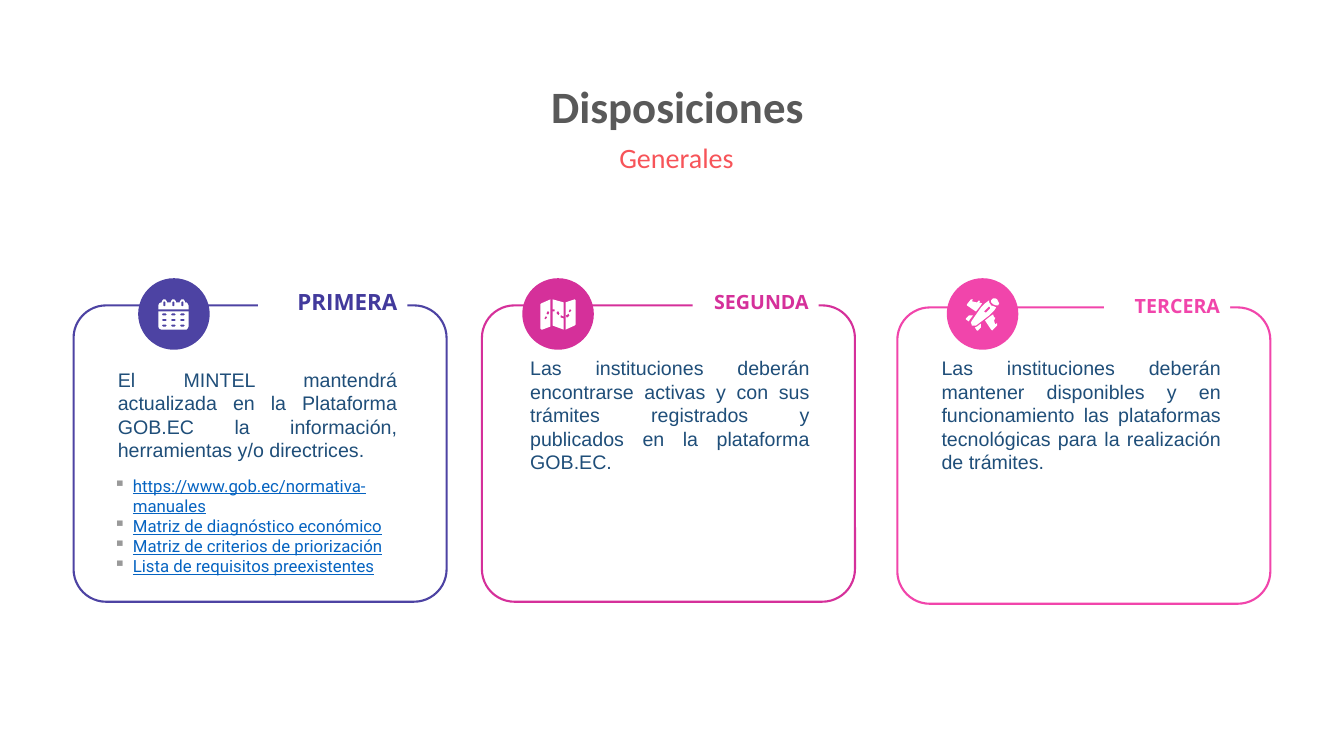
from lxml import etree
from pptx import Presentation
from pptx.dml.color import RGBColor
from pptx.enum import shapes, text
from pptx.oxml.ns import qn
from pptx.util import Inches, Pt

BLUE = "1F4E79"
WHITE = "FFFFFF"
colour = RGBColor.from_string
ALIGN = text.PP_ALIGN
MIDDLE = text.MSO_ANCHOR.MIDDLE


def paint(shape, fill=None, line=None):
    shape.shadow.inherit = False
    if fill:
        shape.fill.solid()
        shape.fill.fore_color.rgb = colour(fill)
    else:
        shape.fill.background()
    if line:
        shape.line.color.rgb = colour(line)
        shape.line.width = Pt(1.5)
    else:
        shape.line.fill.background()


def write(shape, lines, size, font, color, align, bold=False, underline=False,
          anchor=MIDDLE, inset=0.1, bullet=None):
    frame = shape.text_frame
    frame.word_wrap = True
    frame.auto_size = text.MSO_AUTO_SIZE.NONE
    frame.vertical_anchor = anchor
    frame.margin_left = frame.margin_right = Inches(0.1)
    frame.margin_top = frame.margin_bottom = Inches(inset)
    frame.text = "\n".join(lines)
    for paragraph in frame.paragraphs:
        paragraph.alignment = align
        if bullet:
            properties = paragraph._p.get_or_add_pPr()
            properties.set("marL", str(Inches(0.19)))
            properties.set("indent", str(-Inches(0.19)))
            bullet_colour = etree.SubElement(properties, qn("a:buClr"))
            etree.SubElement(bullet_colour, qn("a:srgbClr"), val="999999")
            etree.SubElement(properties, qn("a:buChar"), char=bullet)
        for run in paragraph.runs:
            run.font.size = Pt(size)
            run.font.name = font
            run.font.bold = bold
            run.font.underline = underline
            run.font.color.rgb = colour(color)


presentation = Presentation()
presentation.slide_width = Inches(13.33)
presentation.slide_height = Inches(7.5)
slide = presentation.slides.add_slide(presentation.slide_layouts[5])

# Heading
title = slide.shapes.title
title.left, title.top = Inches(1.33), Inches(0.68)
title.width, title.height = Inches(10.78), Inches(0.66)
write(title, ["Disposiciones"], 32, "Calibri", "595959", ALIGN.CENTER, bold=True,
      anchor=text.MSO_ANCHOR.TOP, inset=0.05)
title.text_frame.paragraphs[0].line_spacing = 1.1
subtitle = slide.shapes.add_textbox(Inches(2.64), Inches(1.34), Inches(8.14), Inches(0.44))
write(subtitle, ["Generales"], 20, "Calibri", "F75459", ALIGN.CENTER,
      anchor=text.MSO_ANCHOR.TOP, inset=0.05)

# Icon outlines, in hundredths of an inch from the corner of their circle
ring_centres = (26, 35, 44)
calendar_top = [(20, 31), (20, 27), (21, 25), (23, 24)]
calendar_holes = []
for x in ring_centres:
    calendar_top += [(x - 2.5, 24), (x - 2.5, 23), (x - 1, 21), (x + 1, 21),
                     (x + 2.5, 23), (x + 2.5, 24)]
    calendar_holes.append([(x - 1, 23.5), (x, 23), (x + 1, 23.5),
                           (x + 1, 27.5), (x, 28), (x - 1, 27.5)])
calendar_top += [(48, 24), (49, 25), (50, 27), (50, 31)]
calendar_days = [[(20, 33), (50, 33), (50, 48), (49, 50), (48, 51),
                  (23, 51), (21, 50), (20, 48)]]
for y in (36, 41.5, 47):
    for x in ring_centres:
        calendar_days.append([(x - 2.5, y), (x - 1.5, y - 1), (x + 1.5, y - 1),
                              (x + 2.5, y), (x + 1.5, y + 1), (x - 1.5, y + 1)])
calendar = [[calendar_top] + calendar_holes, calendar_days]

folded_map = [
    [[(28, 21), (19, 25), (18, 26), (18, 50), (19, 51), (20, 51), (28, 48)],
     [(26, 33), (27, 34), (26, 36), (25, 36), (24, 35), (25, 33)],
     [(24, 38), (25, 39), (24, 40), (23, 41), (22, 40), (23, 38)]],
    [[(30, 21), (30, 31), (32, 31), (32, 33), (30, 33), (30, 47), (41, 51), (41, 40),
      (38, 39), (38, 37), (39, 37), (41, 38), (41, 24)],
     [(35, 33), (36, 33), (37, 35), (36, 37), (35, 36), (34, 35), (34, 34)]],
    [[(52, 21), (43, 24), (43, 51), (52, 47), (53, 46), (53, 22)],
     [(48, 31), (49, 32), (48, 33), (47, 34), (46, 33), (47, 31)],
     [(46, 35), (47, 37), (45, 39), (44, 39), (43, 37), (45, 36)]],
]
plane = [
    [[(23, 37), (22, 37), (19, 40), (19, 41), (22, 43), (23, 41), (26, 37)]],
    [[(46, 36), (43, 38), (38, 42), (44, 51), (45, 52), (46, 51), (50, 47), (50, 45),
      (49, 45), (48, 46), (47, 42), (48, 40), (48, 39), (47, 39)]],
    [[(25, 21), (24, 21), (20, 26), (20, 27), (29, 33), (33, 28), (35, 25), (32, 24),
      (33, 23), (32, 22), (31, 23), (30, 24), (25, 23), (26, 21)]],
    [[(34, 45), (30, 48), (28, 49), (30, 52), (31, 52), (34, 49), (34, 48)]],
    [[(48, 20), (46, 20), (44, 22), (44, 24), (46, 26), (49, 27), (51, 27), (52, 25),
      (50, 21)]],
    [[(42, 22), (38, 25), (34, 29), (25, 42), (24, 44), (25, 47), (27, 47), (29, 47),
      (42, 37), (47, 32), (49, 29), (47, 28), (44, 27), (42, 24)],
     [(42, 28), (43, 29), (43, 30), (39, 34), (38, 34), (37, 33), (38, 32)]],
]

# Cards: colour, frame corner, circle left, icon, label box, label format, body
cards = [
    ("4D43A3", (0.73, 3.03), 1.37, calendar, "PRIMERA", (2.56, 2.73, 1.48), 16, "423A9C",
     text.MSO_ANCHOR.BOTTOM, 1.07,
     "El MINTEL mantendrá actualizada en la Plataforma GOB.EC la información, "
     "herramientas y/o directrices."),
    ("D5309A", (4.78, 3.03), 5.18, folded_map, "SEGUNDA", (6.87, 2.75, 1.25), 14, "D5309A",
     MIDDLE, 5.16,
     "Las instituciones deberán encontrarse activas y con sus trámites registrados "
     "y publicados en la plataforma GOB.EC."),
    ("F145AB", (8.9, 3.05), 9.39, plane, "TERCERA", (10.95, 2.79, 1.25), 14, "F145AB",
     MIDDLE, 9.24,
     "Las instituciones deberán mantener disponibles y en funcionamiento las "
     "plataformas tecnológicas para la realización de trámites."),
]
circle_top = Inches(2.76)
for (accent, (left, top), circle_left, icon, label, (label_left, label_top, label_width),
     label_size, label_colour, label_anchor, body_left, body) in cards:
    card = slide.shapes.add_shape(shapes.MSO_SHAPE.ROUNDED_RECTANGLE, Inches(left),
                                  Inches(top), Inches(3.7), Inches(2.94))
    card.adjustments[0] = 0.11
    paint(card, line=accent)

    circle = slide.shapes.add_shape(shapes.MSO_SHAPE.OVAL, Inches(circle_left), circle_top,
                                    Inches(0.71), Inches(0.71))
    paint(circle, fill=accent)
    for contours in icon:
        # Tenfold coordinates keep the half units whole
        outlines = [[(x * 10, y * 10) for x, y in contour] for contour in contours]
        builder = slide.shapes.build_freeform(*outlines[0][0], scale=1 / Inches(0.001) ** -1)
        builder.add_line_segments(outlines[0][1:])
        for hole in outlines[1:]:
            builder.move_to(*hole[0])
            builder.add_line_segments(hole[1:])
        paint(builder.convert_to_shape(Inches(circle_left), circle_top), fill=WHITE)

    tag = slide.shapes.add_shape(shapes.MSO_SHAPE.RECTANGLE, Inches(label_left),
                                 Inches(label_top), Inches(label_width), Inches(0.49))
    paint(tag, fill=WHITE)
    write(tag, [label], label_size, "Open Sans", label_colour, ALIGN.RIGHT, bold=True,
          anchor=label_anchor)
    box = slide.shapes.add_textbox(Inches(body_left), Inches(3.65), Inches(2.97), Inches(0.93))
    write(box, [body], 14, "Arial", BLUE, ALIGN.JUSTIFY)

# Resources of the first card
resources = slide.shapes.add_textbox(Inches(1.03), Inches(4.66), Inches(3.36), Inches(1.31))
write(resources, ["https://www.gob.ec/normativa-manuales", "Matriz de diagnóstico económico",
                  "Matriz de criterios de priorización", "Lista de requisitos preexistentes"],
      12, "Roboto", "0563C1", ALIGN.JUSTIFY, underline=True, bullet="▪")
resources.text_frame.margin_bottom = Inches(0.3)

presentation.save("out.pptx")
